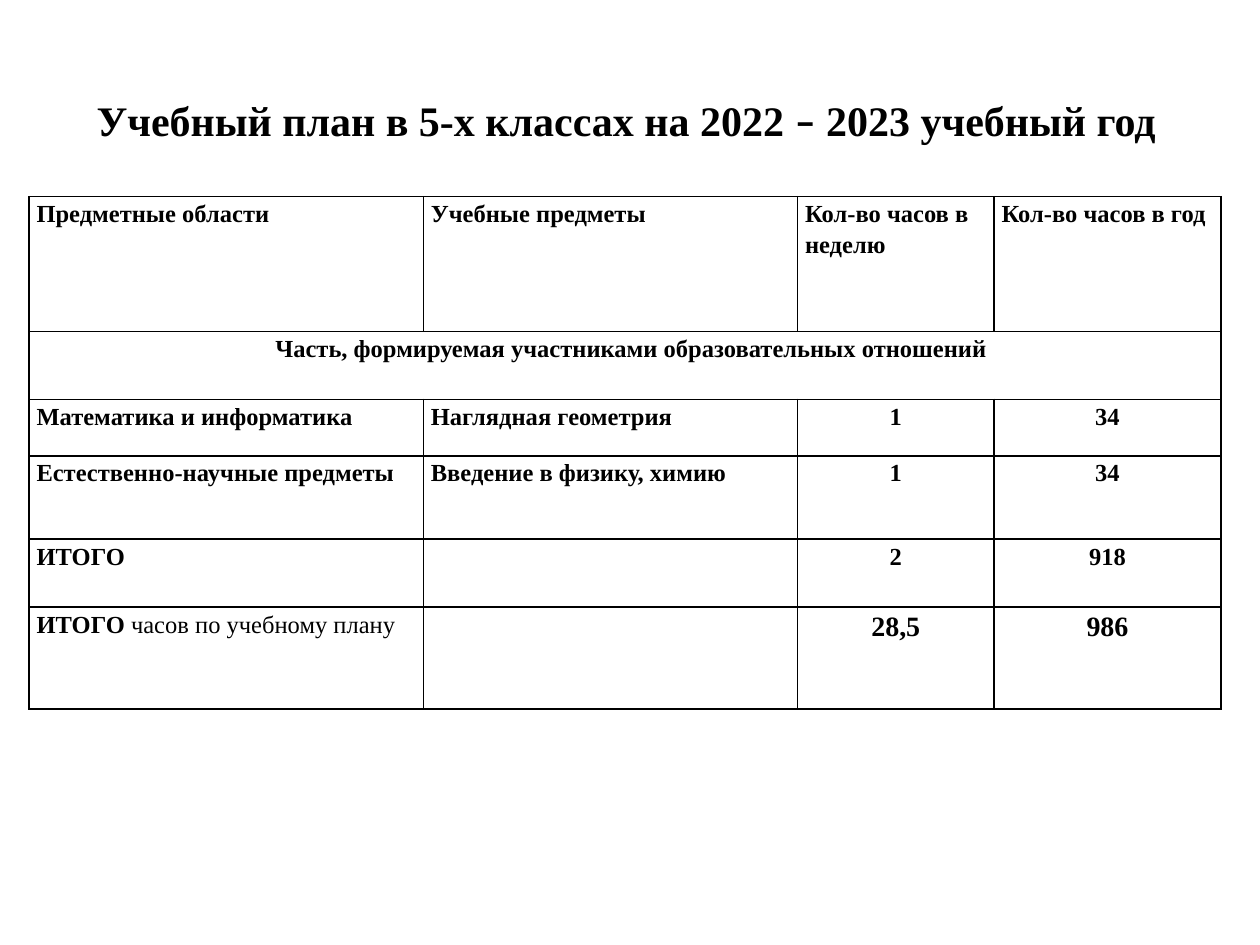
from lxml.etree import SubElement
from pptx import Presentation
from pptx.dml.color import RGBColor
from pptx.enum.text import MSO_ANCHOR, PP_ALIGN
from pptx.oxml.ns import qn
from pptx.util import Inches, Pt

SERIF = "Times New Roman"
BLACK = "000000"
TITLE = [
    ("Учебный план в 5-х классах на 2022 ", SERIF),
    ("–", "Calibri"),
    (" 2023 учебный год", SERIF),
]
PLAN = [
    ["Предметные области", "Учебные предметы", "Кол-во часов в неделю", "Кол-во часов в год"],
    ["Часть, формируемая участниками образовательных отношений", "", "", ""],
    ["Математика и информатика", "Наглядная геометрия", "1", "34"],
    ["Естественно-научные предметы", "Введение в физику, химию", "1", "34"],
    ["ИТОГО", "", "2", "918"],
    ["ИТОГО | часов по учебному плану".replace(" | ", " |"), "", "28,5", "986"],
]
COLUMN_WIDTHS = [3.13, 2.97, 1.56, 1.8]
ROW_HEIGHTS = [1.07, 0.54, 0.45, 0.66, 0.54, 0.81]
HEADER_ROW, SECTION_ROW, TOTAL_ROW = 0, 1, len(PLAN) - 1
FIRST_HOURS_COLUMN = 2


def color(value):
    return RGBColor.from_string(value)


def add_span(para, text, size, bold=True, font=SERIF):
    span = para.add_run()
    span.text = text
    span.font.name = font
    span.font.size = Pt(size)
    span.font.bold = bold
    span.font.color.rgb = color(BLACK)


def add_borders(cell):
    properties = cell._tc.get_or_add_tcPr()
    for side in ("a:lnL", "a:lnR", "a:lnT", "a:lnB"):
        line = SubElement(properties, qn(side), w=str(Pt(1)))
        fill = SubElement(line, qn("a:solidFill"))
        SubElement(fill, qn("a:srgbClr"), val=BLACK)


def fill_cell(cell, text, row, column):
    add_borders(cell)
    cell.fill.background()
    cell.margin_left = Inches(0.16 if row == SECTION_ROW else 0.06)
    cell.margin_right = Inches(0.06)
    cell.margin_top = cell.margin_bottom = 0
    if not text:
        return
    is_hours = column >= FIRST_HOURS_COLUMN and row != HEADER_ROW
    para = cell.text_frame.paragraphs[0]
    para.line_spacing = 1.15
    para.alignment = PP_ALIGN.CENTER if is_hours or row == SECTION_ROW else PP_ALIGN.LEFT
    size = 16 if is_hours and row == TOTAL_ROW else 14
    for index, part in enumerate(text.split("|")):
        add_span(para, part, size, bold=index == 0)


def add_plan(page):
    frame = page.shapes.add_table(
        len(PLAN), len(COLUMN_WIDTHS), Inches(0.23), Inches(1.56),
        Inches(sum(COLUMN_WIDTHS)), Inches(sum(ROW_HEIGHTS)))
    table = frame.table
    table.first_row = table.horz_banding = False
    for column, width in zip(table.columns, COLUMN_WIDTHS):
        column.width = Inches(width)
    for row, height in zip(table.rows, ROW_HEIGHTS):
        row.height = Inches(height)
    table.cell(SECTION_ROW, 0).merge(table.cell(SECTION_ROW, len(COLUMN_WIDTHS) - 1))
    for row, texts in enumerate(PLAN):
        for column, text in enumerate(texts):
            fill_cell(table.cell(row, column), text, row, column)


def add_title(page):
    box = page.shapes.add_textbox(Inches(0.62), Inches(0.7), Inches(8.7), Inches(0.5))
    box.text_frame.word_wrap = True
    box.text_frame.vertical_anchor = MSO_ANCHOR.MIDDLE
    para = box.text_frame.paragraphs[0]
    para.alignment = PP_ALIGN.CENTER
    for text, font in TITLE:
        add_span(para, text, 24, font=font)


def main():
    deck = Presentation()
    deck.slide_width, deck.slide_height = Inches(10), Inches(7.5)
    page = deck.slides.add_slide(deck.slide_layouts[6])
    add_plan(page)
    add_title(page)
    deck.save("out.pptx")


if __name__ == "__main__":
    main()
